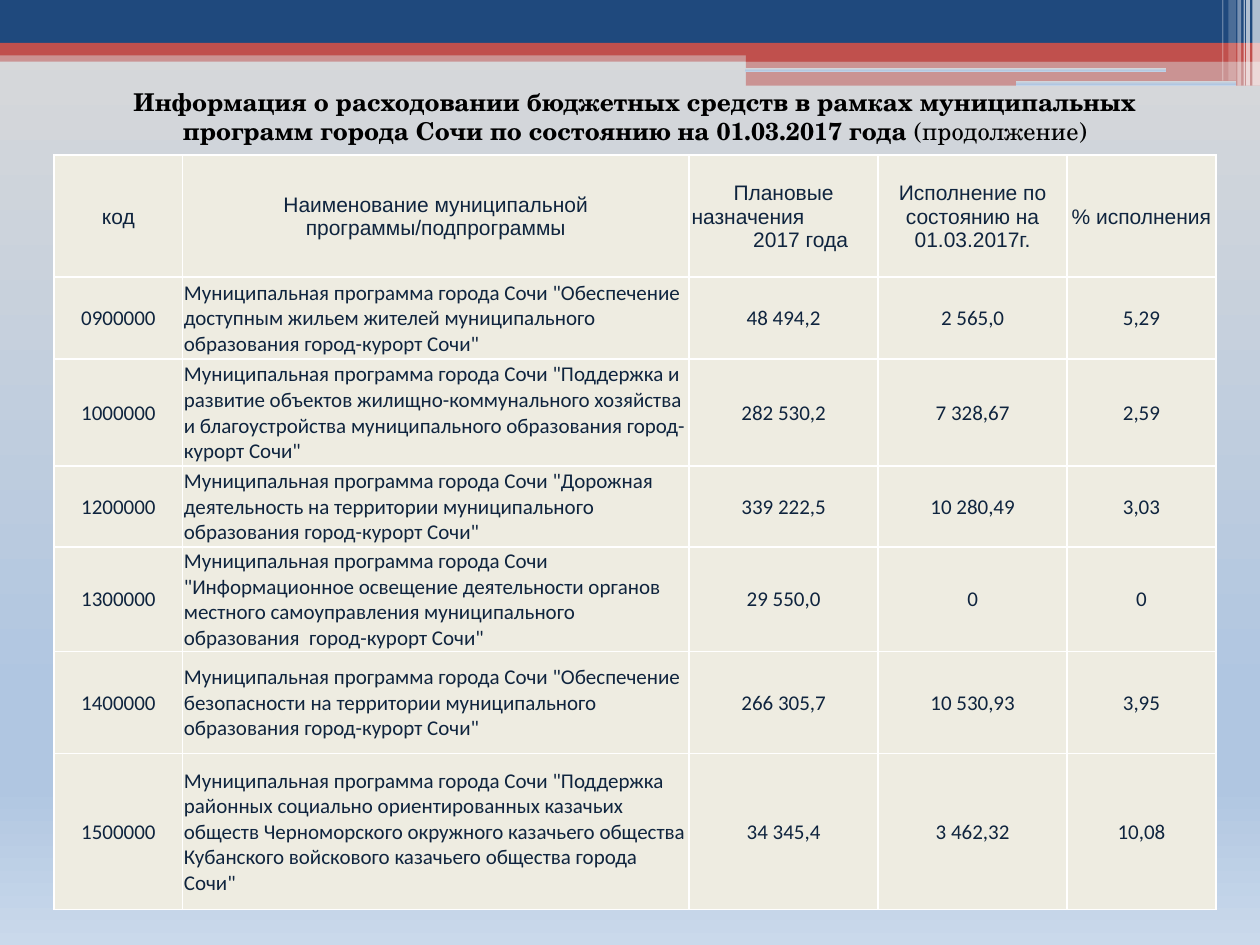
"""Builds a slide with a table of municipal programme spending."""
from lxml import etree
from pptx import Presentation
from pptx.dml.color import RGBColor
from pptx.enum.shapes import MSO_SHAPE
from pptx.enum.text import MSO_ANCHOR, MSO_AUTO_SIZE, PP_ALIGN
from pptx.oxml.ns import qn
from pptx.util import Inches, Pt

RECT, ROUND = MSO_SHAPE.RECTANGLE, MSO_SHAPE.ROUNDED_RECTANGLE
LEFT, CENTER = PP_ALIGN.LEFT, PP_ALIGN.CENTER
COLORS = {"navy": "1F497D", "red": "C0504D", "white": "FFFFFF",
          "cell": "EEECE1", "ink": "0F243E", "title": "000000"}
GRADIENT = [(0, "D9D9D9"), (74, "B0C6E1"), (83, "B0C6E1"), (100, "CAD9EB")]

BANDS = [
    (0, 0.4, 10, 0.09, "red", 50),
    (0, 0, 10, 0.34, "navy", 100),
    (0, 0.34, 10, 0.1, "red", 100),
    (5.92, 0.39, 4.08, 0.1, "red", 100),
    (5.92, 0.48, 4.08, 0.2, "red", 50),
]
BARS = [(5.91, 0.54, 3.35, 0.03), (8.06, 0.64, 1.75, 0.04)]
STRIPES = [(9.94, 0.06, 0.68, 65), (9.89, 0.03, 0.68, 65), (9.87, 0.01, 0.68, 60),
           (9.82, 0.03, 0.68, 40), (9.75, 0.06, 0.64, 20), (9.7, 0.01, 0.64, 30)]

TITLE = [("Информация о расходовании бюджетных средств в рамках муниципальных "
          "программ города Сочи по состоянию на 01.03.2017 года ", True),
         ("(продолжение)", False)]
PLAN = [("Плановые", CENTER, 0), ("назначения", LEFT, 0.01), ("2017 года", CENTER, 0.27)]
HEADER = ["код", "Наименование муниципальной программы/подпрограммы", PLAN,
          "Исполнение по состоянию на 01.03.2017г.", "% исполнения"]
PREFIX = "Муниципальная программа города Сочи "
PROGRAMS = [
    ("0900000", '"Обеспечение доступным жильем жителей муниципального образования '
     'город-курорт Сочи"', "48 494,2", "2 565,0", "5,29"),
    ("1000000", '"Поддержка и развитие объектов жилищно-коммунального хозяйства и '
     'благоустройства муниципального образования город-курорт Сочи"',
     "282 530,2", "7 328,67", "2,59"),
    ("1200000", '"Дорожная деятельность на территории муниципального образования '
     'город-курорт Сочи"', "339 222,5", "10 280,49", "3,03"),
    ("1300000", '"Информационное освещение деятельности органов местного '
     'самоуправления муниципального образования  город-курорт Сочи"',
     "29 550,0", "0", "0"),
    ("1400000", '"Обеспечение безопасности на территории муниципального образования '
     'город-курорт Сочи"', "266 305,7", "10 530,93", "3,95"),
    ("1500000", '"Поддержка районных социально ориентированных казачьих обществ '
     'Черноморского окружного казачьего общества Кубанского войскового казачьего '
     'общества города Сочи"', "34 345,4", "3 462,32", "10,08"),
]
COLS = [1.02, 4.02, 1.5, 1.5, 1.18]
ROWS = [0.97, 0.65, 0.85, 0.64, 0.83, 0.81, 1.24]


def rgb(name):
    return RGBColor.from_string(COLORS[name])


def set_gradient(fill, owner):
    fill.gradient()
    fill.gradient_angle = 270
    stops = owner.xpath(".//a:gsLst")[0]
    for old in list(stops):
        stops.remove(old)
    for pos, color in GRADIENT:
        gs = etree.SubElement(stops, qn("a:gs"), pos=str(pos * 1000))
        etree.SubElement(gs, qn("a:srgbClr"), val=color)


def add_block(s, shape, x, y, w, h):
    sp = s.shapes.add_shape(shape, Inches(x), Inches(y), Inches(w), Inches(h))
    sp.shadow.inherit = False
    sp.line.fill.background()
    return sp


def add_band(s, x, y, w, h, color, opacity):
    sp = add_block(s, RECT, x, y, w, h)
    sp.fill.solid()
    sp.fill.fore_color.rgb = rgb(color)
    if opacity < 100:
        clr = sp._element.spPr.xpath("./a:solidFill/a:srgbClr")[0]
        etree.SubElement(clr, qn("a:alpha"), val=str(opacity * 1000))


def add_run(p, text, font, size, color, bold=False):
    r = p.add_run()
    r.text = text
    r.font.name, r.font.size, r.font.bold = font, Pt(size), bold
    r.font.color.rgb = rgb(color)


def fill_cell(cell, lines, font):
    cell.fill.solid()
    cell.fill.fore_color.rgb = rgb("cell")
    cell.vertical_anchor = MSO_ANCHOR.MIDDLE
    cell.margin_left = cell.margin_right = cell.margin_top = Inches(0.01)
    cell.margin_bottom = 0
    tf = cell.text_frame
    for i, (text, align, indent) in enumerate(lines):
        p = tf.add_paragraph() if i else tf.paragraphs[0]
        p.alignment = align
        if indent:
            p._p.get_or_add_pPr().set("marL", str(Inches(indent)))
        add_run(p, text, font, 12, "ink")


def add_programs(s):
    tbl = s.shapes.add_table(len(ROWS), len(COLS), Inches(0.43), Inches(1.23),
                             Inches(sum(COLS)), Inches(sum(ROWS))).table
    tbl.horz_banding = False
    for col, w in zip(tbl.columns, COLS):
        col.width = Inches(w)
    for row, h in zip(tbl.rows, ROWS):
        row.height = Inches(h)
    for c, head in enumerate(HEADER):
        lines = head if head is PLAN else [(head, CENTER, 0)]
        fill_cell(tbl.cell(0, c), lines, "Arial")
    for r, program in enumerate(PROGRAMS, 1):
        for c, text in enumerate(program):
            line = (PREFIX + text, LEFT, 0) if c == 1 else (text, CENTER, 0)
            fill_cell(tbl.cell(r, c), [line], "Calibri")


def add_title(s):
    tf = s.shapes.add_textbox(Inches(0.59), Inches(0.64), Inches(8.9), Inches(0.57)).text_frame
    tf.word_wrap = True
    tf.auto_size = MSO_AUTO_SIZE.SHAPE_TO_FIT_TEXT
    p = tf.paragraphs[0]
    p.alignment = CENTER
    for text, bold in TITLE:
        add_run(p, text, "TeX Gyre Schola", 14, "title", bold)


def main():
    prs = Presentation()
    prs.slide_width, prs.slide_height = Inches(10), Inches(7.5)
    s = prs.slides.add_slide(prs.slide_layouts[6])
    set_gradient(s.background.fill, s._element)
    for band in BANDS:
        add_band(s, *band)
    for bar in BARS:
        sp = add_block(s, ROUND, *bar)
        set_gradient(sp.fill, sp._element)
    for x, w, h, opacity in STRIPES:
        add_band(s, x, 0, w, h, "white", opacity)
    add_programs(s)
    add_title(s)
    prs.save("out.pptx")


if __name__ == "__main__":
    main()
